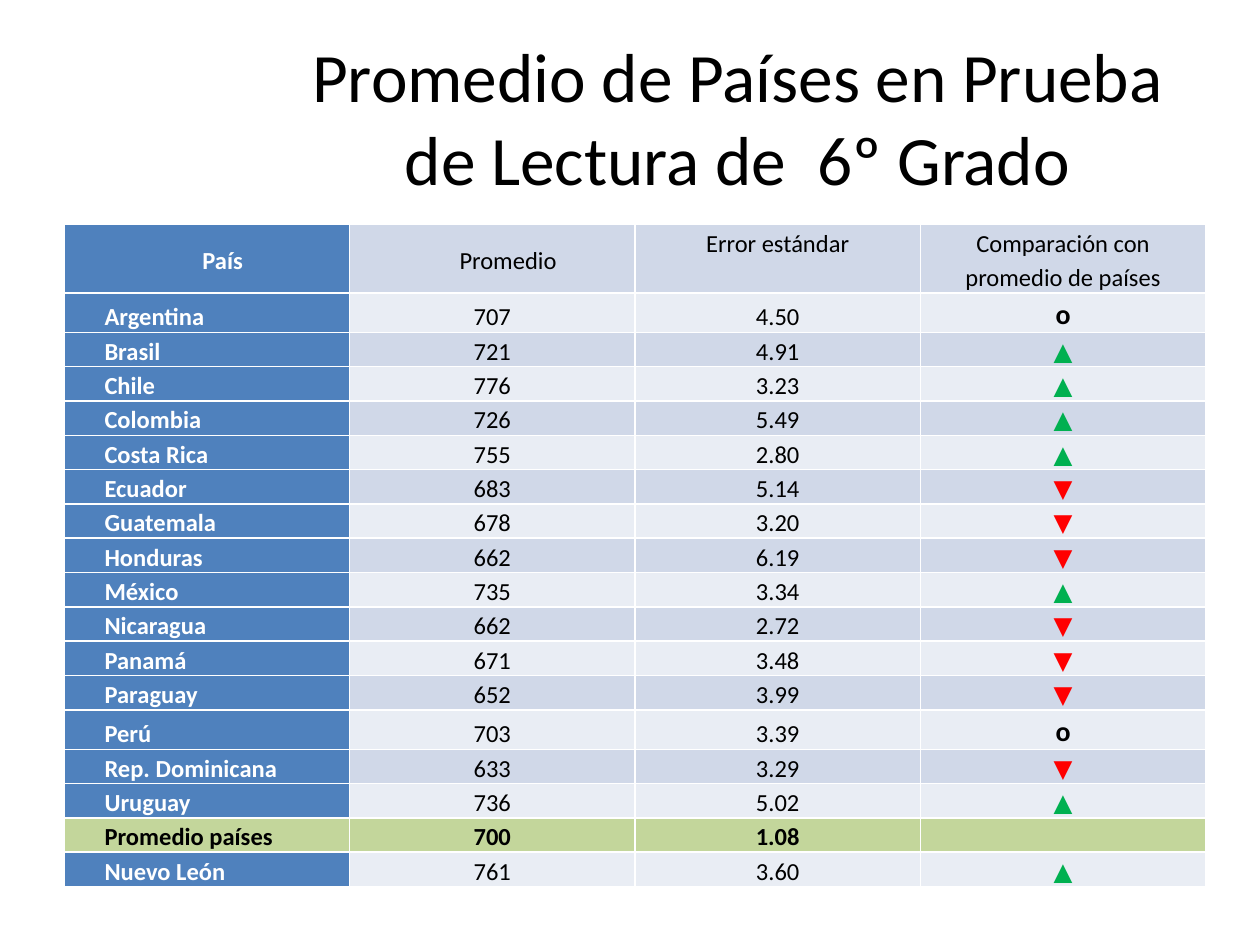
from lxml import etree
from pptx import Presentation
from pptx.dml.color import RGBColor
from pptx.enum.text import MSO_ANCHOR, PP_ALIGN
from pptx.oxml.ns import qn
from pptx.util import Inches, Pt

CENTER, LEFT = PP_ALIGN.CENTER, PP_ALIGN.LEFT
TOP, MIDDLE, BOTTOM = MSO_ANCHOR.TOP, MSO_ANCHOR.MIDDLE, MSO_ANCHOR.BOTTOM

TITLE = "Promedio de Países en Prueba de Lectura de  6º Grado"
HEADERS = ["País", "Promedio", "Error estándar", "Comparación con promedio de países"]
AVERAGE = "Promedio países"
SAME, ABOVE, BELOW = "o", "▲", "▼"
RESULTS = [
    ("Argentina", "707", "4.50", SAME),
    ("Brasil", "721", "4.91", ABOVE),
    ("Chile", "776", "3.23", ABOVE),
    ("Colombia", "726", "5.49", ABOVE),
    ("Costa Rica", "755", "2.80", ABOVE),
    ("Ecuador", "683", "5.14", BELOW),
    ("Guatemala", "678", "3.20", BELOW),
    ("Honduras", "662", "6.19", BELOW),
    ("México", "735", "3.34", ABOVE),
    ("Nicaragua", "662", "2.72", BELOW),
    ("Panamá", "671", "3.48", BELOW),
    ("Paraguay", "652", "3.99", BELOW),
    ("Perú", "703", "3.39", SAME),
    ("Rep. Dominicana", "633", "3.29", BELOW),
    ("Uruguay", "736", "5.02", ABOVE),
    (AVERAGE, "700", "1.08", ""),
    ("Nuevo León", "761", "3.60", ABOVE),
]

FONT = "Calibri"
BLACK, WHITE, BLUE, GREEN = "000000", "FFFFFF", "4F81BD", "C3D69B"
BANDS = ["D0D8E8", "E9EDF4"]
MARK_COLORS = {ABOVE: "00B050", BELOW: "FF0000"}


def rgb(value):
    return RGBColor.from_string(value)


def set_font(paragraph, size, color, bold=False):
    font = paragraph.font
    font.name, font.size, font.bold = FONT, Pt(size), bold
    font.color.rgb = rgb(color)


def write_cell(cell, text, fill, color, bold, size, align, anchor, indent):
    cell.fill.solid()
    cell.fill.fore_color.rgb = rgb(fill)
    cell.margin_left = cell.margin_right = Inches(0.07)
    cell.margin_top = cell.margin_bottom = 0
    cell.vertical_anchor = anchor
    cell.text = text
    paragraph = cell.text_frame.paragraphs[0]
    paragraph.alignment = align
    paragraph.line_spacing = 1.15
    if indent:
        paragraph._p.get_or_add_pPr().set("marL", str(Inches(0.25)))
    set_font(paragraph, size, color, bold)
    if not text:  # keeps the empty cell from making its row taller
        etree.SubElement(paragraph._p, qn("a:endParaRPr"), sz=str(size * 100))


def cell_style(row, column, values):
    """Return the look of a cell from its place and its row's values."""
    text, header, average = values[column], row == 0, values[0] == AVERAGE
    first = column == 0
    fill = GREEN if average else BLUE if first else BANDS[row % 2]
    color = WHITE if first and not average else MARK_COLORS.get(text, BLACK)
    if header:
        anchor = TOP if column == 2 else MIDDLE
    else:
        anchor = MIDDLE if column == 3 or (first and row >= 16) else BOTTOM
    return dict(
        fill=fill,
        color=color,
        bold=first or average or text == SAME,
        size=16 if text == SAME else 14,
        align=LEFT if first and not header else CENTER,
        anchor=anchor,
        indent=first or (header and column == 1),
    )


def row_height(values):
    if values is HEADERS:
        return 0.47
    return 0.25 if values[-1] == SAME else 0.23


def main():
    presentation = Presentation()
    presentation.slide_width, presentation.slide_height = Inches(10), Inches(7.5)
    slide = presentation.slides.add_slide(presentation.slide_layouts[5])

    title = slide.shapes.title
    title.left, title.top = Inches(2.21), Inches(0.3)
    title.width, title.height = Inches(7.29), Inches(1.25)
    title.text_frame.text = TITLE
    title.text_frame.vertical_anchor = MIDDLE
    heading = title.text_frame.paragraphs[0]
    heading.alignment = CENTER
    set_font(heading, 39.6, BLACK)

    rows = [HEADERS, *RESULTS]
    frame = slide.shapes.add_table(len(rows), len(HEADERS), Inches(0.51), Inches(1.78),
                                   Inches(9.06), Inches(5.17))
    table = frame.table
    table.first_row = table.horz_banding = False
    for row, values in enumerate(rows):
        table.rows[row].height = Inches(row_height(values))
        for column, text in enumerate(values):
            write_cell(table.cell(row, column), text, **cell_style(row, column, values))
    frame.height = Inches(5.17)

    presentation.save("out.pptx")


if __name__ == "__main__":
    main()
